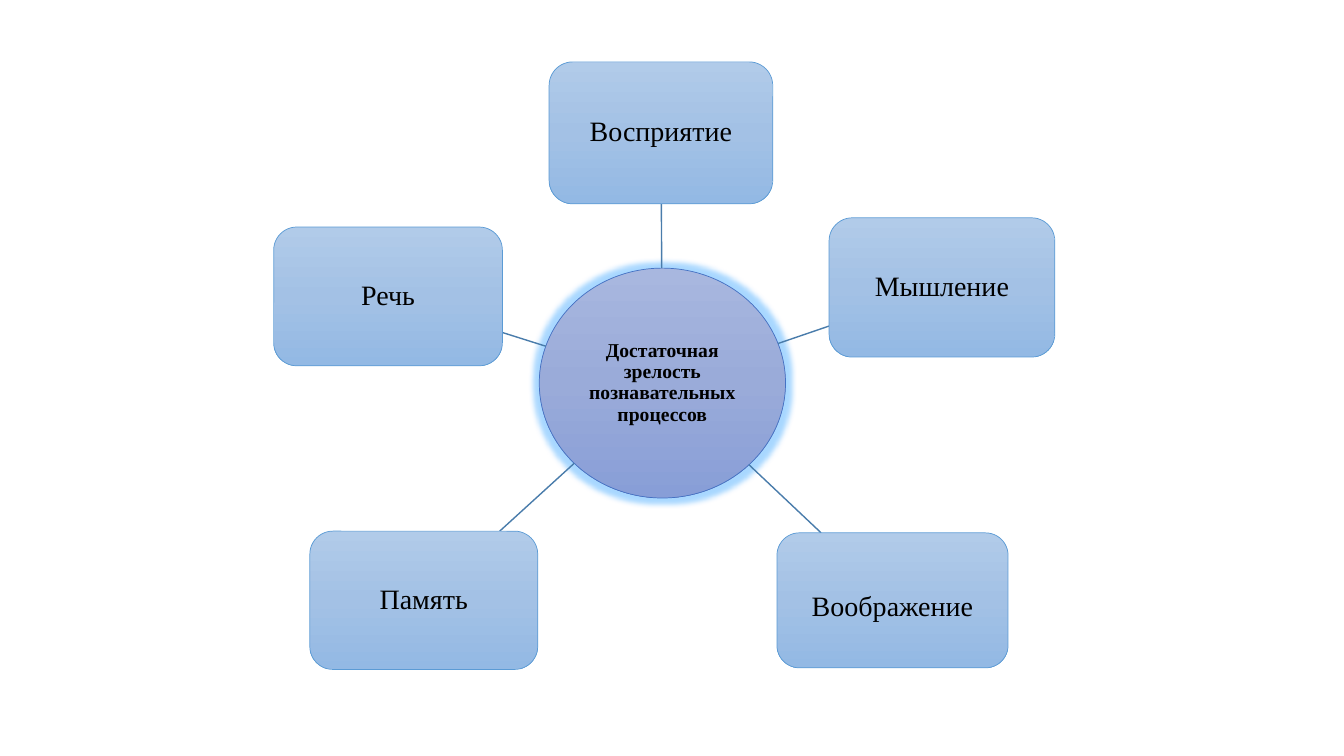
from copy import deepcopy
from dataclasses import dataclass
from math import hypot

from pptx import Presentation
from pptx.dml.color import RGBColor
from pptx.enum.shapes import MSO_CONNECTOR, MSO_SHAPE
from pptx.enum.text import MSO_ANCHOR, PP_ALIGN
from pptx.oxml import parse_xml
from pptx.oxml.ns import nsdecls, qn
from pptx.shapes.autoshape import Shape
from pptx.slide import Slide
from pptx.util import Pt

FONT = "Times New Roman"
BLACK = RGBColor(0x00, 0x00, 0x00)
HUB_LINE = RGBColor(0x44, 0x72, 0xC4)
HUB_GRADIENT = (RGBColor(0xA8, 0xB7, 0xDF), RGBColor(0x9A, 0xAB, 0xD9), RGBColor(0x88, 0x9E, 0xD7))
BOX_LINE = RGBColor(0x5B, 0x9B, 0xD5)
BOX_GRADIENT = (RGBColor(0xB1, 0xCB, 0xE9), RGBColor(0xA3, 0xC1, 0xE5), RGBColor(0x93, 0xB9, 0xE4))
SPOKE_LINE = RGBColor(0x49, 0x7C, 0xAB)
GLOW = RGBColor(0x40, 0xA8, 0xFF)
INSET = 0.7


@dataclass(frozen=True)
class Node:
    text: str
    left: float
    top: float
    width: float
    height: float
    text_drop: float = 0

    @property
    def center(self) -> tuple[float, float]:
        return self.left + self.width / 2, self.top + self.height / 2


HUB = Node("Достаточная зрелость познавательных процессов", 385.2, 191.5, 175.9, 164.2)
PROCESSES = (
    Node("Восприятие", 392.2, 44.2, 159.8, 101.4),
    Node("Мышление", 592.2, 155.6, 161.3, 99.5),
    Node("Воображение", 555, 380.6, 165.1, 96.4, text_drop=5),
    Node("Память", 221.3, 379.4, 162.8, 98.8),
    Node("Речь", 195.5, 162.2, 163.4, 99.1),
)


def write_text(shape: Shape, text: str, *, size: float, bold: bool = False, drop: float = 0) -> None:
    """Centre the text in the shape, moved down by drop."""
    frame = shape.text_frame
    frame.word_wrap = True
    frame.vertical_anchor = MSO_ANCHOR.MIDDLE
    frame.margin_left = frame.margin_right = frame.margin_bottom = Pt(INSET)
    frame.margin_top = Pt(INSET + 2 * drop)
    para = frame.paragraphs[0]
    para.alignment = PP_ALIGN.CENTER
    para.line_spacing = 0.9
    span = para.add_run()
    span.text = text
    span.font.name = FONT
    span.font.size = Pt(size)
    span.font.bold = bold
    span.font.color.rgb = BLACK


def fill_downward(shape: Shape, colors: tuple[RGBColor, ...]) -> None:
    """Fill with evenly spaced gradient stops from top to bottom."""
    fill = shape.fill
    fill.gradient()
    fill.gradient_angle = 270
    stop_list = shape._element.spPr.find(qn("a:gradFill")).find(qn("a:gsLst"))
    stop_list.insert(1, deepcopy(stop_list[0]))
    for index, (stop, color) in enumerate(zip(fill.gradient_stops, colors)):
        stop.position = index / (len(colors) - 1)
        stop.color.rgb = color


def add_node(
    page: Slide, node: Node, kind: MSO_SHAPE, colors: tuple[RGBColor, ...], outline: RGBColor
) -> Shape:
    shape = page.shapes.add_shape(kind, Pt(node.left), Pt(node.top), Pt(node.width), Pt(node.height))
    shape.shadow.inherit = False
    fill_downward(shape, colors)
    shape.line.color.rgb = outline
    shape.line.width = Pt(0.5)
    return shape


def add_glow(shape: Shape, radius: float) -> None:
    effects = shape._element.spPr.find(qn("a:effectLst"))
    effects.append(parse_xml(
        f'<a:glow {nsdecls("a")} rad="{Pt(radius)}"><a:srgbClr val="{GLOW}">'
        '<a:alpha val="45000"/></a:srgbClr></a:glow>'
    ))


def add_spoke(page: Slide, node: Node) -> None:
    """Join hub and node along the line of centres, from edge to edge."""
    (hub_x, hub_y), (node_x, node_y) = HUB.center, node.center
    run, rise = node_x - hub_x, node_y - hub_y
    start = 1 / hypot(run / (HUB.width / 2), rise / (HUB.height / 2))
    end = 1 - 1 / max(abs(run) / (node.width / 2), abs(rise) / (node.height / 2))
    points = [Pt(value) for part in (start, end) for value in (hub_x + part * run, hub_y + part * rise)]
    spoke = page.shapes.add_connector(MSO_CONNECTOR.STRAIGHT, *points)
    spoke.line.color.rgb = SPOKE_LINE
    spoke.line.width = Pt(1)
    spoke._element.spPr.append(parse_xml(f'<a:effectLst {nsdecls("a")}/>'))


def main() -> None:
    deck = Presentation()
    deck.slide_width, deck.slide_height = Pt(960), Pt(540)
    page = deck.slides.add_slide(deck.slide_layouts[6])

    hub = add_node(page, HUB, MSO_SHAPE.OVAL, HUB_GRADIENT, HUB_LINE)
    add_glow(hub, 8)
    write_text(hub, HUB.text, size=14, bold=True)
    for process in PROCESSES:
        add_spoke(page, process)
        box = add_node(page, process, MSO_SHAPE.ROUNDED_RECTANGLE, BOX_GRADIENT, BOX_LINE)
        write_text(box, process.text, size=20, drop=process.text_drop)

    deck.save("out.pptx")


if __name__ == "__main__":
    main()
